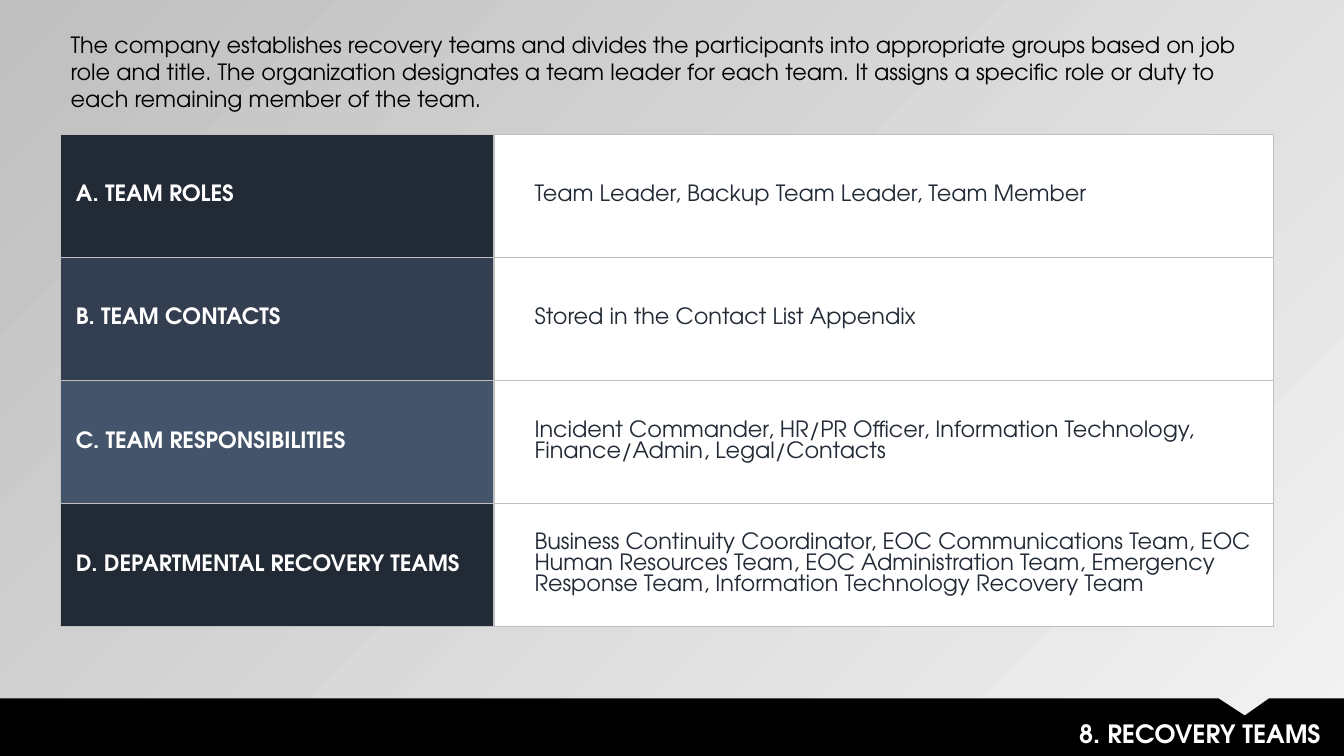
from lxml.etree import SubElement
from pptx import Presentation
from pptx.dml.color import RGBColor
from pptx.enum.text import MSO_ANCHOR as ANCHOR, PP_ALIGN as ALIGN
from pptx.oxml.ns import qn
from pptx.util import Cm, Pt

FONT = "TeX Gyre Adventor"
NAVY = "222A35"


def rgb(value):
    return RGBColor.from_string(value)


def add_run(p, text, size, color, bold=False):
    r = p.add_run()
    r.text = text
    r.font.name = FONT
    r.font.size = Pt(size)
    r.font.bold = bold
    r.font.color.rgb = rgb(color)


prs = Presentation()
prs.slide_width, prs.slide_height = Cm(33.87), Cm(19.05)
s = prs.slides.add_slide(prs.slide_layouts[6])

bg = s.background.fill
bg.gradient()
bg.gradient_angle = 135
for stop, color, position in zip(bg.gradient_stops, ["F2F2F2", "BFBFBF"], [0, 1]):
    stop.color.rgb = rgb(color)
    stop.position = position

teams = [
    ("A. TEAM ROLES", NAVY, "Team Leader, Backup Team Leader, Team Member"),
    ("B. TEAM CONTACTS", "333F50", "Stored in the Contact List Appendix"),
    ("C. TEAM RESPONSIBILITIES", "44546A",
     "Incident Commander, HR/PR Officer, Information Technology, "
     "Finance/Admin, Legal/Contacts"),
    ("D. DEPARTMENTAL RECOVERY TEAMS", NAVY,
     "Business Continuity Coordinator, EOC Communications Team, EOC Human "
     "Resources Team, EOC Administration Team, Emergency Response Team, "
     "Information Technology Recovery Team"),
]
table = s.shapes.add_table(len(teams), 2, Cm(1.53), Cm(3.38), Cm(30.57), Cm(12.4)).table
table.first_row = table.horz_banding = False
table.columns[0].width, table.columns[1].width = Cm(10.92), Cm(19.65)

for row, (heading, shade, detail) in enumerate(teams):
    table.rows[row].height = Cm(3.1)
    columns = [(heading, shade, "FFFFFF", True, 0.38), (detail, "FFFFFF", NAVY, False, 1.02)]
    for col, (text, fill, color, bold, left) in enumerate(columns):
        cell = table.cell(row, col)
        cell.vertical_anchor = ANCHOR.MIDDLE
        cell.margin_left = Cm(left)
        cell.margin_right = cell.margin_top = cell.margin_bottom = Cm(0.38)
        p = cell.text_frame.paragraphs[0]
        p.line_spacing = Pt(15)
        add_run(p, text, 16, color, bold)
        props = cell._tc.get_or_add_tcPr()
        for side in ("a:lnL", "a:lnR", "a:lnT", "a:lnB"):
            border = SubElement(props, qn(side), w=str(Pt(1)))
            SubElement(SubElement(border, qn("a:solidFill")), qn("a:srgbClr"), val="BFBFBF")
        cell.fill.solid()
        cell.fill.fore_color.rgb = rgb(fill)

notch = [(30.71, 17.6), (31.37, 18.03), (31.98, 17.6)]
corners = [(33.87, 17.6), (33.87, 19.05), (0, 19.05)]
outline = s.shapes.build_freeform(Cm(0), Cm(17.6))
outline.add_line_segments([(Cm(x), Cm(y)) for x, y in notch + corners], close=True)
footer = outline.convert_to_shape()
footer.shadow.inherit = False
footer.fill.solid()
footer.fill.fore_color.rgb = rgb("000000")
footer.line.fill.background()

labels = [
    ((10.52, 17.98, 23.01, 1.02), "8. RECOVERY TEAMS", 18, "FFFFFF", True, ALIGN.RIGHT),
    ((1.53, 0.66, 30.57, 2.31),
     "The company establishes recovery teams and divides the participants into "
     "appropriate groups based on job role and title. The organization designates "
     "a team leader for each team. It assigns a specific role or duty to each "
     "remaining member of the team.", 16, "000000", False, ALIGN.LEFT),
]
for box, text, size, color, bold, align in labels:
    tf = s.shapes.add_textbox(*[Cm(v) for v in box]).text_frame
    tf.word_wrap = True
    p = tf.paragraphs[0]
    p.alignment = align
    add_run(p, text, size, color, bold)

prs.save("out.pptx")
